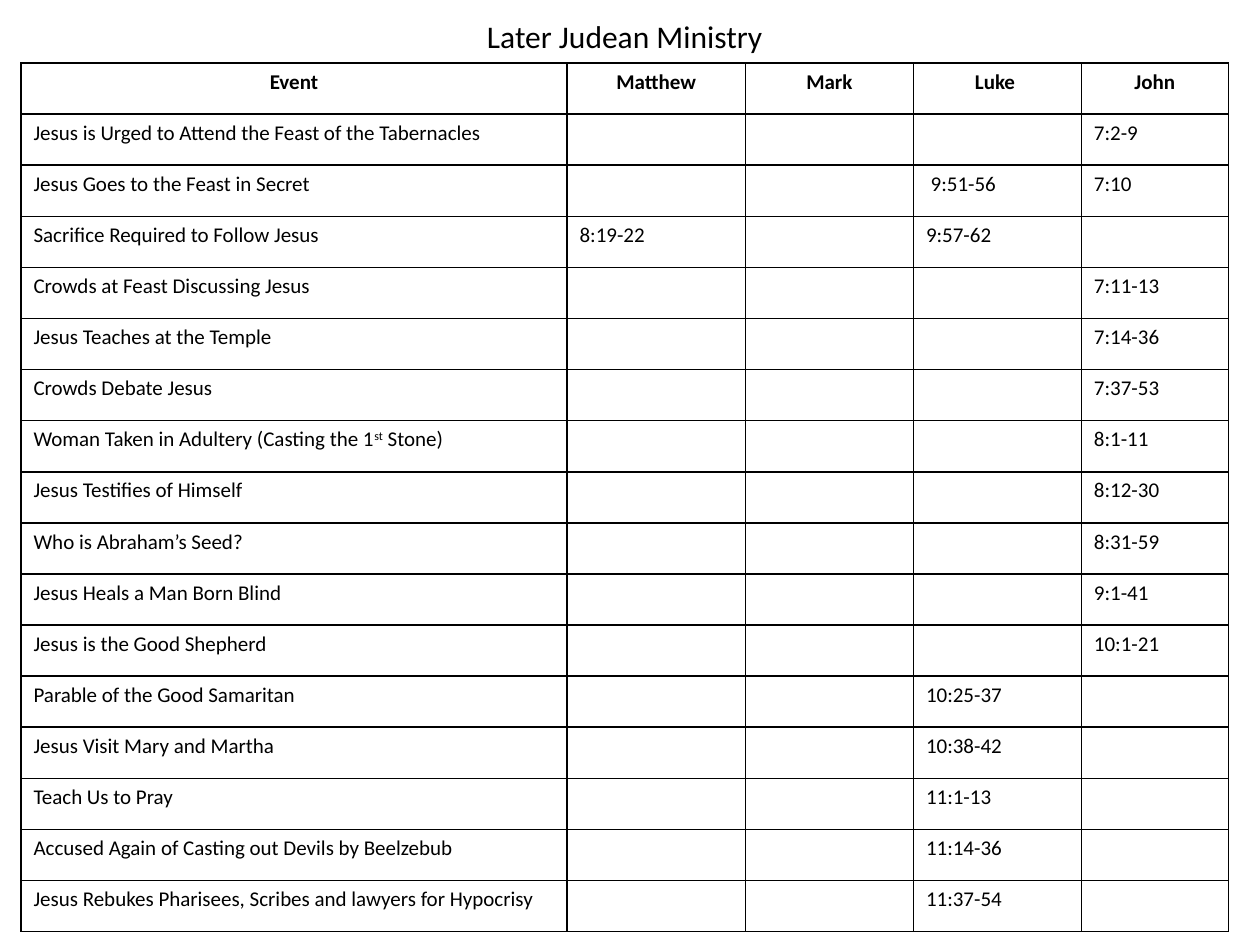
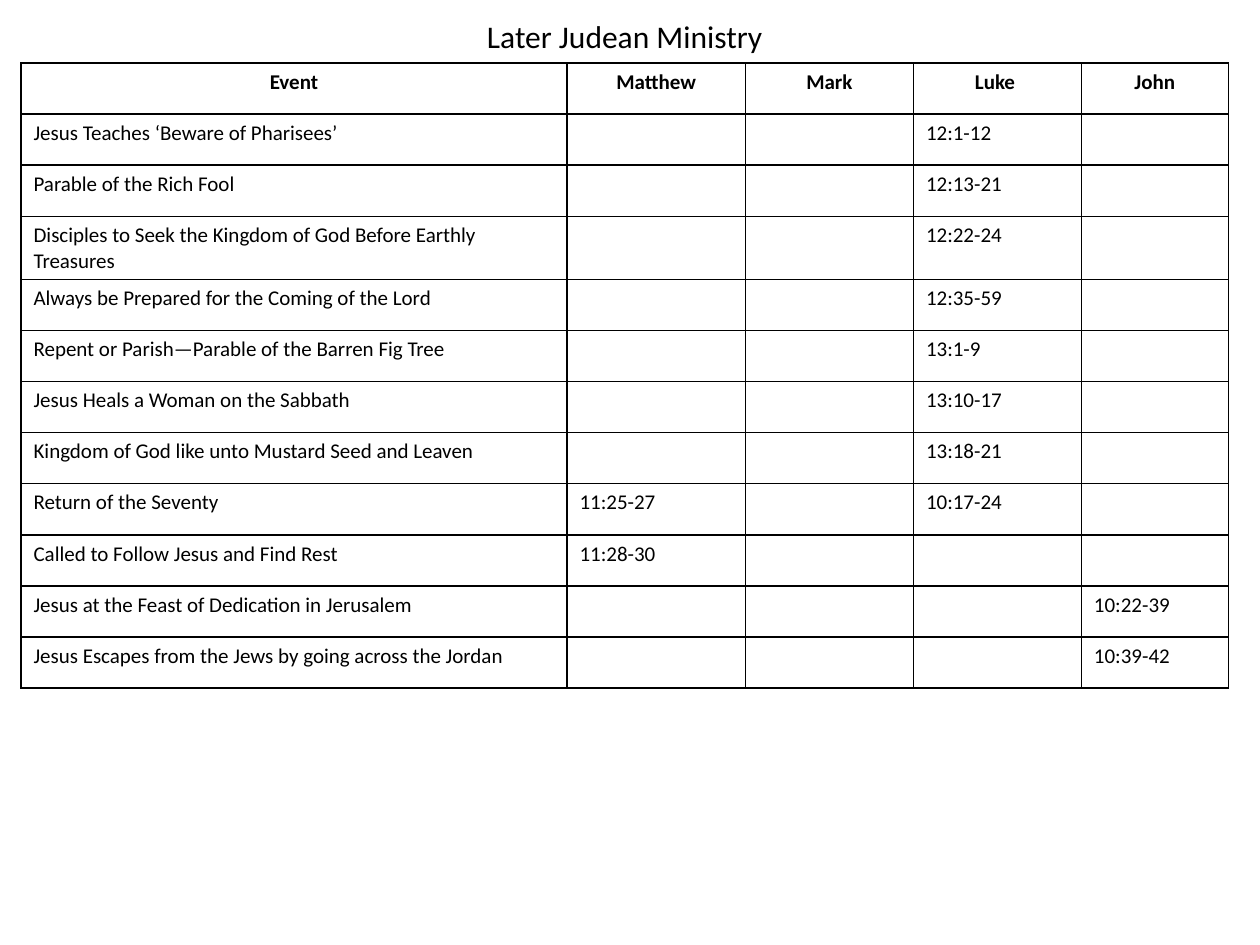
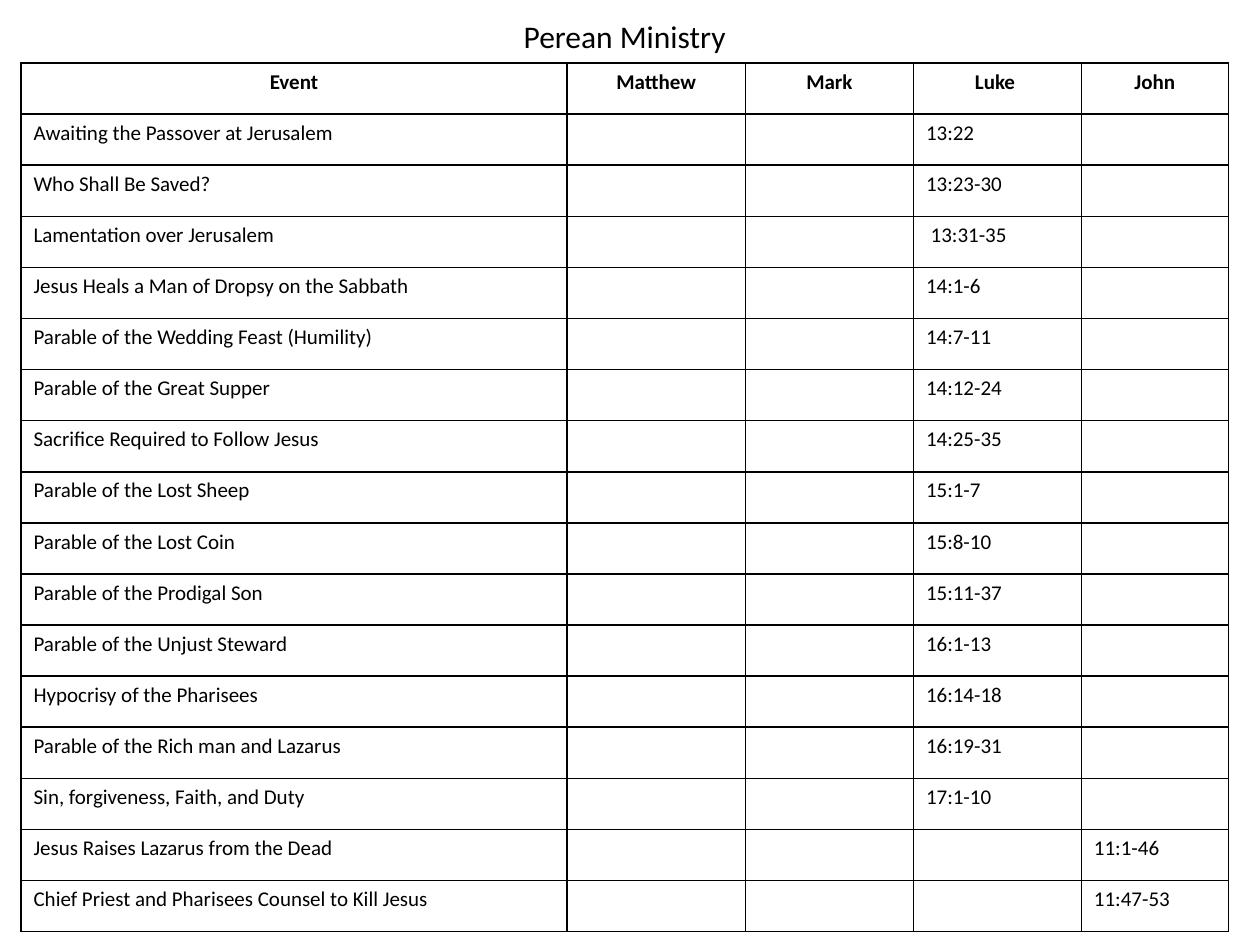
import dataclasses
from typing import Any

import pptx
import pptx.dml.color
import pptx.enum.text
import pptx.oxml
import pptx.oxml.ns
import pptx.util

BLACK = pptx.dml.color.RGBColor(0, 0, 0)
WHITE = pptx.dml.color.RGBColor(255, 255, 255)
CENTER = pptx.enum.text.PP_ALIGN.CENTER
FACE = "Calibri"

WIDE = pptx.util.Inches(10)
HIGH = pptx.util.Inches(7.5)
UNIT = WIDE // 120
ROW = pptx.util.Pt(29.2)
LEFT = 2 * UNIT
SPANS = (52, 17, 16, 16, 14)
WIDTH = sum(SPANS) * UNIT
HEADS = ("Event", "Matthew", "Mark", "Luke ", "John")

TITLE = {"name": FACE, "size": pptx.util.Pt(18), "bold": False}
HEAD = {"name": FACE, "size": pptx.util.Pt(12), "bold": True}
BODY = HEAD | {"bold": False}
PLAIN = {"first_row": False, "horz_banding": False}


@dataclasses.dataclass(frozen=True)
class Event:
    name: str
    matthew: str = ""
    mark: str = ""
    luke: str = ""
    john: str = ""


@dataclasses.dataclass(frozen=True)
class Page:
    title: str
    events: tuple[Event, ...]


PAGES = (
    Page("Later Judean Ministry", (
        Event("Jesus is Urged to Attend the Feast of the Tabernacles", john="7:2-9"),
        Event("Jesus Goes to the Feast in Secret", luke=" 9:51-56", john="7:10"),
        Event("Sacrifice Required to Follow Jesus", matthew="8:19-22", luke="9:57-62"),
        Event("Crowds at Feast Discussing Jesus", john="7:11-13"),
        Event("Jesus Teaches at the Temple", john="7:14-36"),
        Event("Crowds Debate Jesus", john="7:37-53"),
        Event("Woman Taken in Adultery (Casting the 1^st^ Stone)", john="8:1-11"),
        Event("Jesus Testifies of Himself", john="8:12-30"),
        Event("Who is Abraham’s Seed?", john="8:31-59"),
        Event("Jesus Heals a Man Born Blind", john="9:1-41"),
        Event("Jesus is the Good Shepherd", john="10:1-21"),
        Event("Parable of the Good Samaritan", luke="10:25-37"),
        Event("Jesus Visit Mary and Martha", luke="10:38-42"),
        Event("Teach Us to Pray", luke="11:1-13"),
        Event("Accused Again of Casting out Devils by Beelzebub", luke="11:14-36"),
        Event("Jesus Rebukes Pharisees, Scribes and lawyers for Hypocrisy", luke="11:37-54"),
    )),
    Page("Later Judean Ministry", (
        Event("Jesus Teaches ‘Beware of Pharisees’", luke="12:1-12"),
        Event("Parable of the Rich Fool", luke="12:13-21"),
        Event("Disciples to Seek the Kingdom of God Before Earthly Treasures", luke="12:22-24"),
        Event("Always be Prepared for the Coming of the Lord", luke="12:35-59"),
        Event("Repent or Parish—Parable of the Barren Fig Tree", luke="13:1-9"),
        Event("Jesus Heals a Woman on the Sabbath", luke="13:10-17"),
        Event("Kingdom of God like unto Mustard Seed and Leaven", luke="13:18-21"),
        Event("Return of the Seventy", matthew="11:25-27", luke="10:17-24"),
        Event("Called to Follow Jesus and Find Rest", matthew="11:28-30"),
        Event("Jesus at the Feast of Dedication in Jerusalem", john="10:22-39"),
        Event("Jesus Escapes from the Jews by going across the Jordan", john="10:39-42"),
    )),
    Page("Perean Ministry", (
        Event("Awaiting the Passover at Jerusalem", luke="13:22"),
        Event("Who Shall Be Saved?", luke="13:23-30"),
        Event("Lamentation over Jerusalem", luke=" 13:31-35"),
        Event("Jesus Heals a Man of Dropsy on the Sabbath", luke="14:1-6"),
        Event("Parable of the Wedding Feast (Humility)", luke="14:7-11"),
        Event("Parable of the Great Supper", luke="14:12-24"),
        Event("Sacrifice Required to Follow Jesus", luke="14:25-35"),
        Event("Parable of the Lost Sheep", luke="15:1-7"),
        Event("Parable of the Lost Coin", luke="15:8-10"),
        Event("Parable of the Prodigal Son", luke="15:11-37"),
        Event("Parable of the Unjust Steward", luke="16:1-13"),
        Event("Hypocrisy of the Pharisees", luke="16:14-18"),
        Event("Parable of the Rich man and Lazarus", luke="16:19-31"),
        Event("Sin, forgiveness, Faith, and Duty", luke="17:1-10"),
        Event("Jesus Raises Lazarus from the Dead", john="11:1-46"),
        Event("Chief Priest and Pharisees Counsel to Kill Jesus", john="11:47-53"),
    )),
)


def apply(target: Any, style: dict[str, Any]) -> None:
    for key, value in style.items():
        setattr(target, key, value)


def write(frame: Any, text: str, style: dict[str, Any], align: Any = None) -> None:
    line = frame.paragraphs[0]
    line.alignment = align
    for place, part in enumerate(text.split("^") if text else ()):
        run = line.add_run()
        run.text = part
        apply(run.font, style)
        run.font.color.rgb = BLACK
        if place % 2:
            run.font._element.set("baseline", "30000")


def border(cell: Any) -> None:
    props = cell._tc.get_or_add_tcPr()
    for place, side in enumerate(("lnL", "lnR", "lnT", "lnB")):
        props.insert(place, pptx.oxml.parse_xml(
            f'<a:{side} {pptx.oxml.ns.nsdecls("a")} w="{pptx.util.Pt(1)}">'
            f'<a:solidFill><a:srgbClr val="{BLACK}"/></a:solidFill></a:{side}>'))


def title(slide: Any, text: str) -> None:
    frame = slide.shapes.add_textbox(LEFT, UNIT, WIDTH, ROW).text_frame
    apply(frame, {"word_wrap": True, "auto_size": pptx.enum.text.MSO_AUTO_SIZE.SHAPE_TO_FIT_TEXT})
    write(frame, text, TITLE, CENTER)


def chart(slide: Any, events: tuple[Event, ...]) -> None:
    rows = [HEADS, *map(dataclasses.astuple, events)]
    table = slide.shapes.add_table(
        len(rows), len(HEADS), LEFT, 6 * UNIT, WIDTH, ROW * len(rows)).table
    apply(table, PLAIN)
    for column, span in zip(table.columns, SPANS):
        column.width = span * UNIT
    for index, (band, texts) in enumerate(zip(table.rows, rows)):
        band.height = ROW
        style, align = (BODY, None) if index else (HEAD, CENTER)
        for cell, text in zip(band.cells, texts):
            cell.fill.solid()
            cell.fill.fore_color.rgb = WHITE
            border(cell)
            write(cell.text_frame, text, style, align)


def main() -> None:
    deck = pptx.Presentation()
    apply(deck, {"slide_width": WIDE, "slide_height": HIGH})
    for page in PAGES:
        slide = deck.slides.add_slide(deck.slide_layouts[6])
        chart(slide, page.events)
        title(slide, page.title)
    deck.save("out.pptx")


if __name__ == "__main__":
    main()
